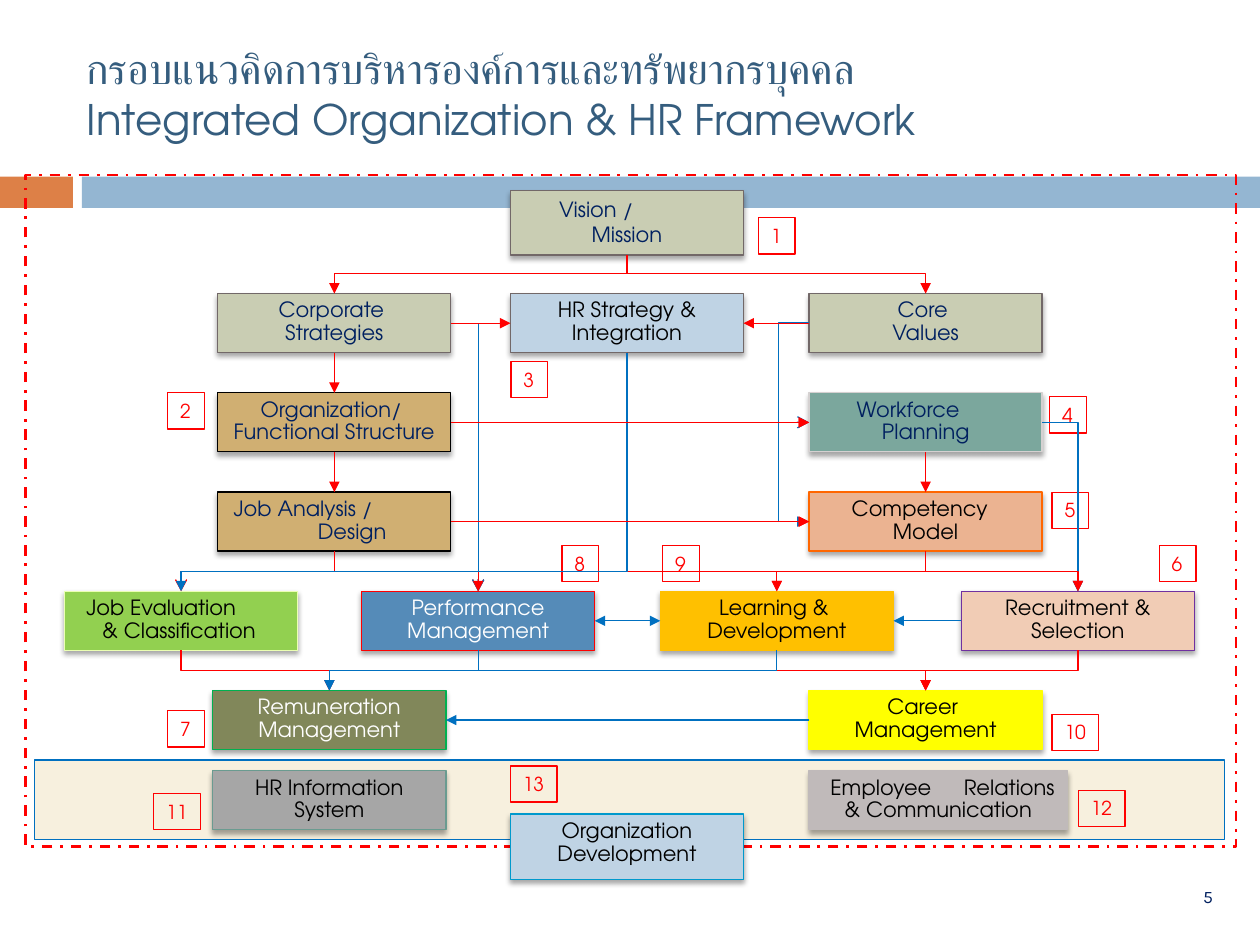
from lxml import etree
from pptx import Presentation
from pptx.dml.color import RGBColor
from pptx.enum.dml import MSO_LINE
from pptx.enum.shapes import MSO_CONNECTOR, MSO_SHAPE
from pptx.enum.text import MSO_ANCHOR, MSO_AUTO_SIZE, PP_ALIGN
from pptx.oxml.ns import qn
from pptx.util import Cm, Pt

RECTANGLE = MSO_SHAPE.RECTANGLE
STRAIGHT, ELBOW = MSO_CONNECTOR.STRAIGHT, MSO_CONNECTOR.ELBOW
LEFT, CENTER = PP_ALIGN.LEFT, PP_ALIGN.CENTER
MIDDLE, DASH_DOT = MSO_ANCHOR.MIDDLE, MSO_LINE.DASH_DOT
GROW = MSO_AUTO_SIZE.SHAPE_TO_FIT_TEXT
TOP_SIDE, LEFT_SIDE, BOTTOM_SIDE, RIGHT_SIDE = range(4)

RED = RGBColor(0xFF, 0x00, 0x00)
BLUE = RGBColor(0x00, 0x70, 0xC0)
NAVY = RGBColor(0x00, 0x20, 0x60)
BLACK = RGBColor(0x00, 0x00, 0x00)
WHITE = RGBColor(0xFF, 0xFF, 0xFF)
TITLE_BLUE = RGBColor(0x35, 0x5D, 0x7E)
ORANGE_BAR = RGBColor(0xDD, 0x80, 0x47)
BLUE_BAR = RGBColor(0x94, 0xB6, 0xD2)
CREAM = RGBColor(0xF7, 0xF0, 0xDE)
SAGE = RGBColor(0xC9, 0xCD, 0xB3)
TAUPE = RGBColor(0x72, 0x68, 0x68)
TAN = RGBColor(0xD0, 0xAF, 0x72)
PALE_BLUE = RGBColor(0xBF, 0xD3, 0xE4)
CYAN = RGBColor(0x00, 0x99, 0xCC)
TEAL = RGBColor(0x7B, 0xA7, 0x9D)
SILVER = RGBColor(0xD5, 0xD1, 0xD1)
SALMON = RGBColor(0xEB, 0xB3, 0x91)
ORANGE = RGBColor(0xFF, 0x66, 0x00)
LIME = RGBColor(0x92, 0xD0, 0x50)
PALE_LIME = RGBColor(0xEB, 0xFF, 0xB3)
STEEL = RGBColor(0x55, 0x8B, 0xB8)
AMBER = RGBColor(0xFF, 0xC0, 0x00)
PEACH = RGBColor(0xF1, 0xCC, 0xB5)
PURPLE = RGBColor(0x70, 0x30, 0xA0)
OLIVE = RGBColor(0x81, 0x87, 0x5A)
GREEN = RGBColor(0x00, 0xB0, 0x50)
YELLOW = RGBColor(0xFF, 0xFF, 0x00)
GRAY = RGBColor(0xA6, 0xA6, 0xA6)
GRAY_GREEN = RGBColor(0x6A, 0x9B, 0x90)
WARM_GRAY = RGBColor(0xC0, 0xBA, 0xBA)

BODY_FONT, TITLE_FONT = "TeX Gyre Adventor", "Karla"
BOX_WIDTH, BOX_HEIGHT, ROW_GAP = 4.7, 1.19, 0.81
ROWS = [5.92 + row * (BOX_HEIGHT + ROW_GAP) for row in range(5)]
SUPPORT_ROW = 15.54
COLUMN_LEFT, COLUMN_CENTER, COLUMN_RIGHT = 4.39, 10.29, 16.31
LOWER_LEFT = 4.29
PROCESS_COLUMNS = (1.3, 7.29, 13.31, 19.38)

TITLE = (("กรอบแนวคิดการบริหารองค์การและทรัพยากรบุคคล", TITLE_FONT),
         ("Integrated Organization & HR Framework", BODY_FONT))

PANELS = (
    (0, 3.56, 1.47, 0.63, ORANGE_BAR, None),
    (1.65, 3.56, 23.75, 0.63, BLUE_BAR, None),
    (0.69, 15.32, 24, 1.6, CREAM, BLUE),
)
FRAME = (0.51, 3.53, 24.41, 13.54)

# name: left, top, fill, line, text colour, (line, indent or None when centred)
BOXES = {
    "vision": (COLUMN_CENTER, 3.84, SAGE, TAUPE, NAVY, (("Vision /", 0.73), ("Mission", None))),
    "corporate": (COLUMN_LEFT, ROWS[0], SAGE, TAUPE, NAVY, (("Corporate ", None), ("Strategies", None))),
    "strategy": (COLUMN_CENTER, ROWS[0], PALE_BLUE, TAUPE, BLACK, (("HR Strategy &", None), ("Integration", None))),
    "core": (COLUMN_RIGHT, ROWS[0], SAGE, TAUPE, NAVY, (("Core ", None), ("Values", None))),
    "organization": (COLUMN_LEFT, ROWS[1], TAN, BLACK, NAVY, (("Organization/ ", None), ("Functional Structure", None))),
    "workforce": (COLUMN_RIGHT, ROWS[1], TEAL, SILVER, NAVY, (("Workforce", 0.71), ("Planning", 1.22))),
    "analysis": (COLUMN_LEFT, ROWS[2], TAN, BLACK, NAVY, (("Job Analysis /", 0.07), ("Design", 1.77))),
    "competency": (COLUMN_RIGHT, ROWS[2], SALMON, ORANGE, BLACK, (("Competency", 0.61), ("Model", None))),
    "evaluation": (PROCESS_COLUMNS[0], ROWS[3], LIME, PALE_LIME, BLACK, (("Job Evaluation", 0.19), ("& Classification", 0.51))),
    "performance": (PROCESS_COLUMNS[1], ROWS[3], STEEL, RED, WHITE, (("Performance", None), ("Management", None))),
    "learning": (PROCESS_COLUMNS[2], ROWS[3], AMBER, AMBER, BLACK, (("Learning & ", None), ("Development", None))),
    "recruitment": (PROCESS_COLUMNS[3], ROWS[3], PEACH, PURPLE, BLACK, (("Recruitment &", None), ("Selection", None))),
    "remuneration": (LOWER_LEFT, ROWS[4], OLIVE, GREEN, WHITE, (("Remuneration", None), ("Management", None))),
    "career": (COLUMN_RIGHT, ROWS[4], YELLOW, YELLOW, BLACK, (("Career ", None), ("Management", None))),
    "information": (LOWER_LEFT, SUPPORT_ROW, GRAY, GRAY_GREEN, BLACK, (("HR Information", None), ("System", None))),
    "relations": (COLUMN_RIGHT, SUPPORT_ROW, WARM_GRAY, WARM_GRAY, BLACK, (("Employee\tRelations", 0.18), ("& Communication", None))),
    "development": (COLUMN_CENTER, 16.41, PALE_BLUE, CYAN, BLACK, (("Organization", None), ("Development", None))),
}
SPECIAL_SIZES = {"vision": (BOX_WIDTH, 1.3), "relations": (5.21, BOX_HEIGHT),
                 "development": (BOX_WIDTH, 1.32)}
RELATIONS_TAB = 2.69

BADGES = (("1", 15.29, 4.39), ("2", 3.38, 7.92), ("3", 10.3, 7.29), ("4", 21.16, 8),
          ("5", 21.21, 9.93), ("6", 23.37, 11), ("7", 3.38, 14.33), ("8", 11.33, 11),
          ("9", 13.36, 11), ("10", 21.21, 14.4), ("11", 3.1, 16), ("12", 21.74, 15.93),
          ("13", 10.29, 15.44))

DOWN = (BOTTOM_SIDE, TOP_SIDE)
ACROSS = (RIGHT_SIDE, LEFT_SIDE)
BACK = (LEFT_SIDE, RIGHT_SIDE)
TURN_RIGHT = (BOTTOM_SIDE, LEFT_SIDE)
TURN_DOWN = (RIGHT_SIDE, TOP_SIDE)
ELBOWS = (
    ("vision", "corporate", DOWN, RED), ("vision", "core", DOWN, RED),
    ("analysis", "evaluation", DOWN, RED, "arrow"), ("evaluation", "remuneration", DOWN, RED),
    ("competency", "recruitment", DOWN, RED), ("workforce", "recruitment", TURN_DOWN, BLUE),
    ("core", "competency", (LEFT_SIDE, LEFT_SIDE), BLUE, "triangle", 15.7),
    ("competency", "learning", DOWN, RED),
    ("analysis", "workforce", ACROSS, BLUE, "arrow", 12.64),
    ("analysis", "performance", DOWN, RED, "arrow"),
    ("corporate", "performance", TURN_DOWN, BLUE, "arrow"),
    ("recruitment", "career", DOWN, RED), ("learning", "career", DOWN, RED),
    ("performance", "career", DOWN, RED), ("performance", "remuneration", DOWN, BLUE),
    ("strategy", "workforce", TURN_RIGHT, RED), ("strategy", "learning", DOWN, RED),
    ("strategy", "performance", DOWN, RED), ("strategy", "competency", TURN_RIGHT, RED),
    ("strategy", "recruitment", DOWN, RED), ("strategy", "evaluation", DOWN, BLUE),
    ("learning", "remuneration", DOWN, BLUE),
)
STRAIGHTS = (
    ("corporate", "organization", DOWN, RED), ("organization", "analysis", DOWN, RED),
    ("workforce", "competency", DOWN, RED), ("organization", "workforce", ACROSS, RED),
    ("analysis", "competency", ACROSS, RED), ("corporate", "strategy", ACROSS, RED),
    ("core", "strategy", BACK, RED), ("career", "remuneration", BACK, BLUE),
    ("recruitment", "learning", BACK, BLUE), ("performance", "learning", ACROSS, BLUE, True),
)


def box_size(name):
    return SPECIAL_SIZES.get(name, (BOX_WIDTH, BOX_HEIGHT))


def side_point(name, side):
    left, top = BOXES[name][:2]
    width, height = box_size(name)
    return ((left + width / 2, top), (left, top + height / 2),
            (left + width / 2, top + height), (left + width, top + height / 2))[side]


def write(paragraph, text, **formats):
    run = paragraph.add_run()
    run.text = text
    color = formats.pop("color")
    for key, value in formats.items():
        setattr(run.font, key, value)
    run.font.color.rgb = color


def add_rectangle(slide, bounds, fill, line):
    shape = slide.shapes.add_shape(RECTANGLE, *map(Cm, bounds))
    shape.shadow.inherit = False
    if fill is None:
        shape.fill.background()
    else:
        shape.fill.solid()
        shape.fill.fore_color.rgb = fill
    if line is None:
        shape.line.fill.background()
    else:
        shape.line.color.rgb = line
        shape.line.width = Pt(0.75)
    return shape


def add_box(slide, name):
    left, top, fill, line, color, lines = BOXES[name]
    shape = add_rectangle(slide, (left, top, *box_size(name)), fill, line)
    effects = shape._element.spPr.find(qn("a:effectLst"))
    shadow = etree.SubElement(effects, qn("a:outerShdw"), blurRad=str(Pt(3)), dist=str(Pt(2)),
                              dir="5400000", rotWithShape="0")
    shadow_color = etree.SubElement(shadow, qn("a:srgbClr"), val="000000")
    etree.SubElement(shadow_color, qn("a:alpha"), val="35000")
    frame = shape.text_frame
    frame.word_wrap = True
    frame.vertical_anchor = MSO_ANCHOR.TOP
    for index, (text, indent) in enumerate(lines):
        paragraph = frame.add_paragraph() if index else frame.paragraphs[0]
        paragraph.alignment = CENTER if indent is None else LEFT
        paragraph.line_spacing = 1.0 if name == "vision" else 0.9
        properties = paragraph._p.get_or_add_pPr()
        if indent is not None:
            properties.set("marL", str(Cm(indent)))
        if "\t" in text:
            tabs = etree.SubElement(properties, qn("a:tabLst"))
            etree.SubElement(tabs, qn("a:tab"), pos=str(Cm(RELATIONS_TAB)), algn="l")
        write(paragraph, text, size=Pt(12), name=BODY_FONT, color=color)
    return shape


def add_text(slide, bounds):
    box = slide.shapes.add_textbox(*map(Cm, bounds))
    box.text_frame.word_wrap = True
    return box


def style_connector(connector, color, tail="triangle", head=None):
    connector.line.color.rgb = color
    connector.line.width = Pt(0.75)
    line = connector.line._get_or_add_ln()
    for tag, kind in (("a:headEnd", head), ("a:tailEnd", tail)):
        if kind:
            etree.SubElement(line, qn(tag), type=kind)
    etree.SubElement(connector._element.spPr, qn("a:effectLst"))


def add_elbow(slide, begin, end, sides, color, tail="triangle", bend=None):
    (x1, y1), (x2, y2) = side_point(begin, sides[0]), side_point(end, sides[1])
    if sides[0] == sides[1]:
        x2 = x1 - 0.03
    vertical = sides[0] == BOTTOM_SIDE
    if sides == DOWN:
        bend = y2 - ROW_GAP / 2
    points, rotation = (x1, y1, x2, y2), 0
    if vertical:
        x, y = (x1 + x2) / 2, (y1 + y2) / 2
        half_width, half_height = (y2 - y1) / 2, abs(x2 - x1) / 2
        if x2 > x1:
            half_width, rotation = -half_width, 270
        else:
            rotation = 90
        points = (x - half_width, y - half_height, x + half_width, y + half_height)
    connector = slide.shapes.add_connector(ELBOW, *map(Cm, points))
    properties = connector._element.spPr
    if rotation:
        properties.find(qn("a:xfrm")).set("rot", str(rotation * 60000))
    geometry = properties.find(qn("a:prstGeom"))
    if bend is None:
        geometry.set("prst", "bentConnector2")
    else:
        start, stop = (y1, y2) if vertical else (x1, x2)
        ratio = round((bend - start) / (stop - start) * 100000)
        etree.SubElement(geometry.find(qn("a:avLst")), qn("a:gd"), name="adj1", fmla=f"val {ratio}")
    style_connector(connector, color, tail)


def add_straight(slide, shapes, begin, end, sides, color, two_way=False):
    points = (*side_point(begin, sides[0]), *side_point(end, sides[1]))
    connector = slide.shapes.add_connector(STRAIGHT, *map(Cm, points))
    connector.begin_connect(shapes[begin], sides[0])
    connector.end_connect(shapes[end], sides[1])
    style_connector(connector, color, head="triangle" if two_way else None)


def main():
    presentation = Presentation()
    presentation.slide_width, presentation.slide_height = Cm(25.4), Cm(19.05)
    slide = presentation.slides.add_slide(presentation.slide_layouts[6])
    for *bounds, fill, line in PANELS:
        add_rectangle(slide, bounds, fill, line)
    frame = add_rectangle(slide, FRAME, None, RED)
    frame.line.width, frame.line.dash_style = Pt(1.5), DASH_DOT
    shapes = {name: add_box(slide, name) for name in BOXES}
    for number, left, top in BADGES:
        badge = add_text(slide, (left, top, 0.74 if len(number) == 1 else 0.94, 0.73))
        badge.line.color.rgb, badge.line.width = RED, Pt(0.75)
        badge.text_frame.word_wrap, badge.text_frame.auto_size = False, GROW
        write(badge.text_frame.paragraphs[0], number, size=Pt(11), name=BODY_FONT, color=RED)
    for elbow in ELBOWS:
        add_elbow(slide, *elbow)
    for straight in STRAIGHTS:
        add_straight(slide, shapes, *straight)
    title = add_text(slide, (1.5, 0.74, 21, 3.33)).text_frame
    for index, (text, font) in enumerate(TITLE):
        paragraph = title.add_paragraph() if index else title.paragraphs[0]
        write(paragraph, text, size=Pt(24), name=font, color=TITLE_BLUE)
    page = add_text(slide, (23.62, 17.73, 1.47, 0.69)).text_frame
    page.vertical_anchor = MIDDLE
    page.paragraphs[0].alignment = CENTER
    write(page.paragraphs[0], "5", size=Pt(10), name=TITLE_FONT, color=NAVY)
    presentation.save("out.pptx")


if __name__ == "__main__":
    main()
